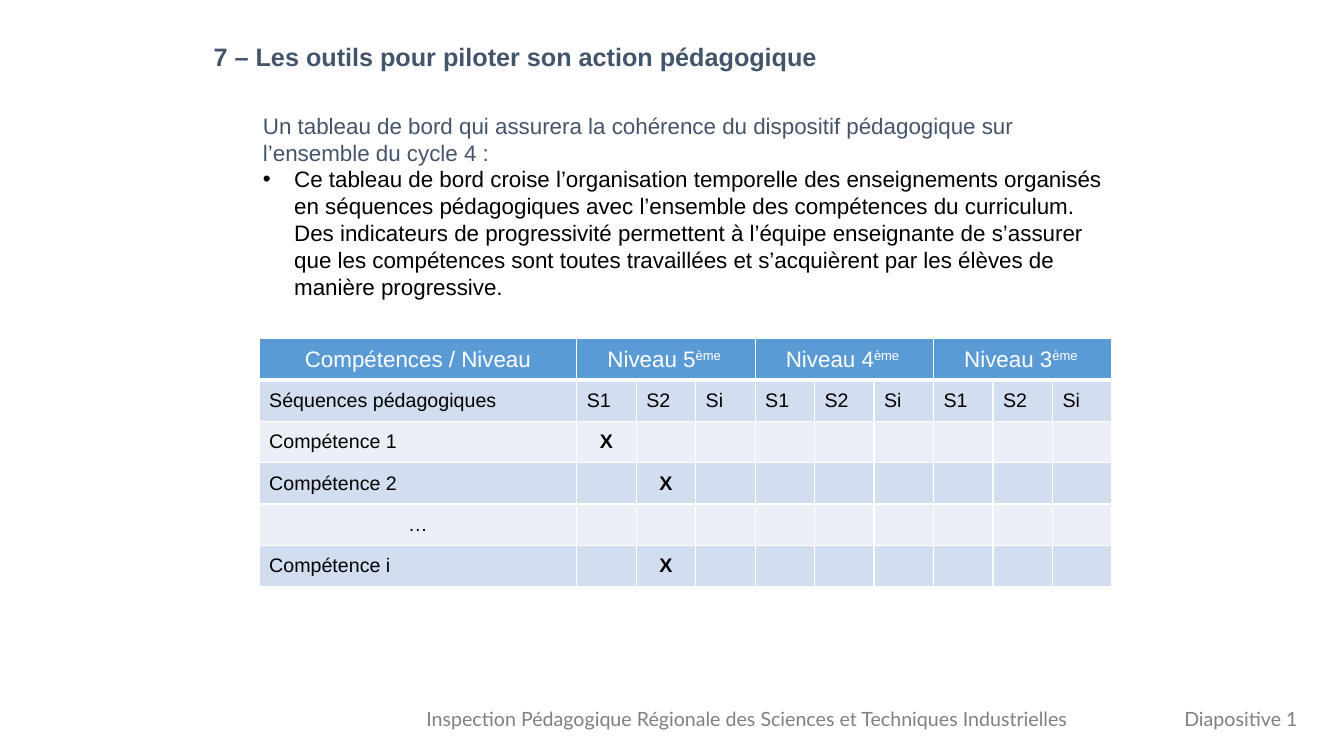
from lxml import etree
from pptx import Presentation
from pptx.dml.color import RGBColor
from pptx.enum.text import MSO_ANCHOR, PP_ALIGN
from pptx.oxml.ns import qn
from pptx.util import Inches, Pt

SLATE = RGBColor(0x44, 0x54, 0x6A)
GREY = RGBColor(0x80, 0x80, 0x80)
BLACK = RGBColor(0x00, 0x00, 0x00)
WHITE = RGBColor(0xFF, 0xFF, 0xFF)
HEADER_BLUE = RGBColor(0x5B, 0x9B, 0xD5)
BAND_DARK = RGBColor(0xD2, 0xDE, 0xEF)
BAND_LIGHT = RGBColor(0xEA, 0xEF, 0xF7)

LEVELS = ["Niveau 5", "Niveau 4", "Niveau 3"]
SEQUENCES = ["S1", "S2", "Si"]
SKILLS = [("Compétence 1", 1), ("Compétence 2", 2), ("…", None), ("Compétence i", 2)]
ROW_HEIGHT = Inches(0.41)
SKILL_WIDTH = Inches(3.15)
SEQUENCE_WIDTH = Inches(0.59)


def style(paragraph, size, color, font="Arial", bold=False, align=PP_ALIGN.LEFT):
    paragraph.alignment = align
    paragraph.font.size = Pt(size)
    paragraph.font.name = font
    paragraph.font.bold = bold
    paragraph.font.color.rgb = color


def add_text(slide, left, top, width, height, text, wrap=False, **look):
    """Add a one-paragraph text box and return its text frame."""
    box = slide.shapes.add_textbox(Inches(left), Inches(top), Inches(width), Inches(height))
    frame = box.text_frame
    frame.word_wrap = wrap
    frame.text = text
    style(frame.paragraphs[0], **look)
    return frame


def add_bullet(frame, text, **look):
    paragraph = frame.add_paragraph()
    paragraph.text = text
    properties = paragraph._p.get_or_add_pPr()
    properties.set("marL", str(Inches(0.31)))
    properties.set("indent", str(-Inches(0.31)))
    etree.SubElement(properties, qn("a:buFont"), typeface="Arial")
    etree.SubElement(properties, qn("a:buChar"), char="•")
    style(paragraph, **look)


def draw_borders(cell, bottom=1, top=1):
    widths = {"a:lnL": 1, "a:lnR": 1, "a:lnT": top, "a:lnB": bottom}
    for side, width in widths.items():
        line = etree.SubElement(cell._tc.get_or_add_tcPr(), qn(side), w=str(Pt(width)))
        fill = etree.SubElement(line, qn("a:solidFill"))
        etree.SubElement(fill, qn("a:srgbClr"), val=str(WHITE))


def fill_cell(cell, text, fill, size=14, color=BLACK, **look):
    cell.fill.solid()
    cell.fill.fore_color.rgb = fill
    cell.vertical_anchor = MSO_ANCHOR.MIDDLE
    paragraph = cell.text_frame.paragraphs[0]
    if text:
        paragraph.text = text
    style(paragraph, size, color, **look)


def add_superscript(cell, text):
    run = cell.text_frame.paragraphs[0].add_run()
    run.text = text
    run._r.get_or_add_rPr().set("baseline", "30000")


def add_dashboard(slide):
    sequence_count = len(LEVELS) * len(SEQUENCES)
    row_count = len(SKILLS) + 2
    table = slide.shapes.add_table(
        row_count, sequence_count + 1, Inches(2.57), Inches(3.36),
        SKILL_WIDTH + sequence_count * SEQUENCE_WIDTH, row_count * ROW_HEIGHT).table
    for row in table.rows:
        row.height = ROW_HEIGHT
    for index, column in enumerate(table.columns):
        column.width = SEQUENCE_WIDTH if index else SKILL_WIDTH

    for row in range(row_count):
        for column in range(sequence_count + 1):
            draw_borders(table.cell(row, column), bottom=1 if row else 3,
                         top=3 if row == 1 else 1)

    header = dict(fill=HEADER_BLUE, size=16, color=WHITE, align=PP_ALIGN.CENTER)
    fill_cell(table.cell(0, 0), "Compétences / Niveau", **header)
    for index, level in enumerate(LEVELS):
        first = 1 + index * len(SEQUENCES)
        cell = table.cell(0, first)
        cell.merge(table.cell(0, first + len(SEQUENCES) - 1))
        fill_cell(cell, level, **header)
        add_superscript(cell, "ème ")

    sequence_row = ["Séquences pédagogiques"] + SEQUENCES * len(LEVELS)
    for column, label in enumerate(sequence_row):
        fill_cell(table.cell(1, column), label, BAND_DARK)

    for row, (skill, marked) in enumerate(SKILLS, start=2):
        band = BAND_DARK if row % 2 else BAND_LIGHT
        skill_align = PP_ALIGN.CENTER if skill == "…" else PP_ALIGN.LEFT
        fill_cell(table.cell(row, 0), skill, band, align=skill_align)
        for column in range(1, sequence_count + 1):
            mark = "X" if column == marked else ""
            fill_cell(table.cell(row, column), mark, band, bold=bool(mark),
                      align=PP_ALIGN.CENTER)


def main():
    presentation = Presentation()
    presentation.slide_width = Inches(13.33)
    presentation.slide_height = Inches(7.5)
    slide = presentation.slides.add_slide(presentation.slide_layouts[6])

    footer = dict(size=14, color=GREY, font="Lato")
    add_text(slide, 4.13, 6.96, 6.73, 0.34,
             "Inspection Pédagogique Régionale des Sciences et Techniques Industrielles",
             **footer)
    add_text(slide, 11.41, 6.96, 1.56, 0.34, "Diapositive 1",
             align=PP_ALIGN.RIGHT, **footer)
    add_text(slide, 2.02, 0.36, 6.25, 0.4,
             "7 – Les outils pour piloter son action pédagogique",
             size=18, color=SLATE, bold=True)
    add_dashboard(slide)
    purpose = add_text(
        slide, 2.51, 1.06, 8.64, 1.99,
        "Un tableau de bord qui assurera la cohérence du dispositif pédagogique sur "
        "l’ensemble du cycle 4 :", wrap=True, size=16, color=SLATE)
    add_bullet(
        purpose,
        "Ce tableau de bord croise l’organisation temporelle des enseignements organisés "
        "en séquences pédagogiques avec l’ensemble des compétences du curriculum. "
        "Des indicateurs de progressivité permettent à l’équipe enseignante de s’assurer "
        "que les compétences sont toutes travaillées et s’acquièrent par les élèves de "
        "manière progressive.", size=16, color=BLACK)

    presentation.save("out.pptx")


if __name__ == "__main__":
    main()
